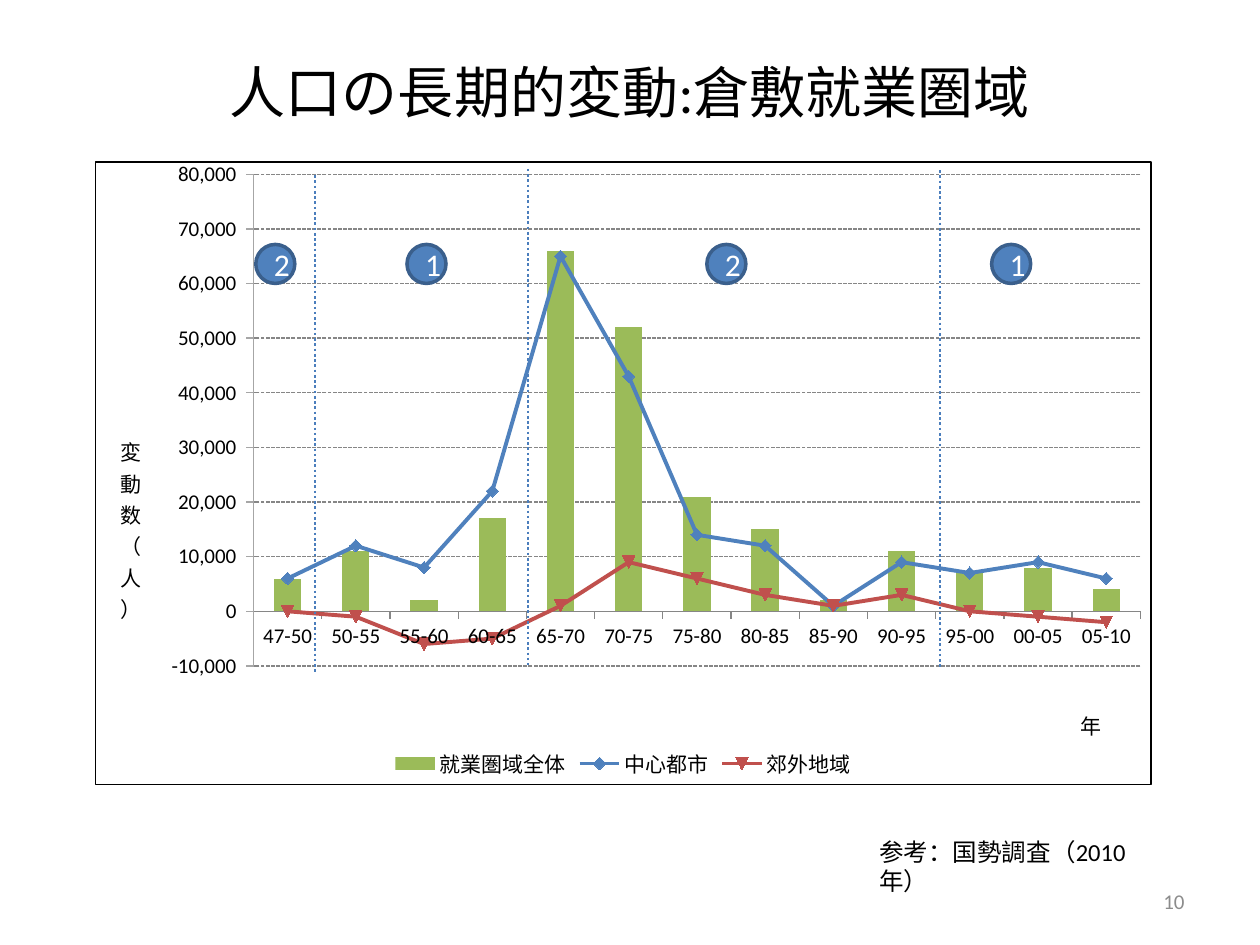
from dataclasses import dataclass

from lxml.etree import SubElement
from pptx import Presentation
from pptx.chart.data import CategoryChartData
from pptx.dml.color import RGBColor
from pptx.enum.chart import XL_CHART_TYPE as ChartType
from pptx.enum.chart import XL_LEGEND_POSITION as LegendPosition
from pptx.enum.chart import XL_TICK_MARK as TickMark
from pptx.enum.dml import MSO_LINE as Dash
from pptx.enum.shapes import MSO_CONNECTOR as Connector
from pptx.enum.shapes import MSO_SHAPE as ShapeType
from pptx.enum.text import MSO_ANCHOR as Anchor
from pptx.enum.text import PP_ALIGN as Align
from pptx.oxml import parse_xml
from pptx.oxml.ns import nsdecls, qn
from pptx.util import Inches, Pt


@dataclass(frozen=True)
class Theme:
    font: str = "Calibri"
    text: str = "000000"
    muted: str = "8C8C8C"
    white: str = "FFFFFF"
    grid: str = "868686"
    axis: str = "A6A6A6"
    total: str = "9BBB59"
    center: str = "4F81BD"
    suburb: str = "C0504D"
    badge_line: str = "3A5F8C"
    divider: str = "4B7EBC"
    title_size: int = 32
    badge_size: int = 18
    note_size: int = 14
    small_size: int = 12


THEME = Theme()
PERIODS = ["47-50", "50-55", "55-60", "60-65", "65-70", "70-75", "75-80",
           "80-85", "85-90", "90-95", "95-00", "00-05", "05-10"]
SERIES = {
    "就業圏域全体": [6000, 11000, 2000, 17000, 66000, 52000, 21000,
               15000, 2000, 11000, 7000, 8000, 4000],
    "中心都市": [6000, 12000, 8000, 22000, 65000, 43000, 14000,
             12000, 1000, 9000, 7000, 9000, 6000],
    "郊外地域": [0, -1000, -6000, -5000, 1000, 9000, 6000,
             3000, 1000, 3000, 0, -1000, -2000],
}
BADGES = [("2", 2.03), ("1", 3.23), ("2", 5.61), ("1", 7.87)]
DIVIDERS = [(2.5, 1.39), (4.19, 1.34), (7.46, 1.35)]


def rgb(value):
    return RGBColor.from_string(value)


def style_font(font, size, color):
    font.name = THEME.font
    font.size = Pt(size)
    font.bold = False
    font.color.rgb = rgb(color)


def style_line(line, color, width, dash=None):
    line.color.rgb = rgb(color)
    line.width = Pt(width)
    if dash is not None:
        line.dash_style = dash


def write_text(shape, text, size, color, align):
    frame = shape.text_frame
    frame.word_wrap = True
    frame.vertical_anchor = Anchor.MIDDLE
    frame.text = text
    paragraph = frame.paragraphs[0]
    paragraph.alignment = align
    style_font(paragraph.runs[0].font, size, color)


def add_text(slide, box, text, size, color, align):
    shape = slide.shapes.add_textbox(*map(Inches, box))
    write_text(shape, text, size, color, align)


def add_badge(group, text, left):
    shape = group.shapes.add_shape(
        ShapeType.OVAL, Inches(left), Inches(1.94), Inches(0.31), Inches(0.31))
    shape.shadow.inherit = False
    shape.fill.solid()
    shape.fill.fore_color.rgb = rgb(THEME.center)
    style_line(shape.line, THEME.badge_line, 2)
    write_text(shape, text, THEME.badge_size, THEME.white, Align.CENTER)


def add_divider(slide, x, top):
    line = slide.shapes.add_connector(
        Connector.STRAIGHT, Inches(x), Inches(top), Inches(x), Inches(top + 3.94))
    style_line(line.line, THEME.divider, 1.5, Dash.ROUND_DOT)
    SubElement(line._element.spPr, qn("a:effectLst"))


def set_layout(parent, **values):
    layout = parent.find(qn("c:layout"))
    if layout is None:
        layout = parse_xml(f"<c:layout {nsdecls('c')}/>")
        title_text = parent.find(qn("c:tx"))
        if title_text is None:
            parent.insert(0, layout)
        else:
            title_text.addnext(layout)
    manual = SubElement(layout, qn("c:manualLayout"))
    for name, value in values.items():
        SubElement(manual, qn(f"c:{name}")).set("val", str(value))


def set_axis_title(axis, text, x, y):
    frame = axis.axis_title.text_frame
    frame.text = text
    style_font(frame.paragraphs[0].runs[0].font, THEME.small_size, THEME.text)
    set_layout(axis.axis_title._element, xMode="edge", yMode="edge", x=x, y=y)
    return frame


def style_axis(axis, color):
    axis.major_tick_mark = TickMark.OUTSIDE
    axis.minor_tick_mark = TickMark.NONE
    style_font(axis.tick_labels.font, THEME.small_size, THEME.text)
    style_line(axis.format.line, color, 0.75)


def move_to_lines(chart):
    bars = chart.plots[0]._element
    lines = parse_xml(
        f"<c:lineChart {nsdecls('c')}><c:grouping val='standard'/>"
        "<c:varyColors val='0'/></c:lineChart>")
    for series in bars.findall(qn("c:ser"))[1:]:
        for flag in series.findall(qn("c:invertIfNegative")):
            series.remove(flag)
        lines.append(series)
    SubElement(lines, qn("c:marker")).set("val", "1")
    for axis_id in bars.findall(qn("c:axId")):
        SubElement(lines, qn("c:axId")).set("val", axis_id.get("val"))
    bars.addnext(lines)


def style_series(chart):
    bars, lines = chart.plots
    bars.gap_width = 150
    bars.vary_by_categories = False
    total = bars.series[0].format.fill
    total.solid()
    total.fore_color.rgb = rgb(THEME.total)
    for series, color in zip(lines.series, (THEME.center, THEME.suburb)):
        series.smooth = False
        style_line(series.format.line, color, 2.25)
        series.marker.size = 7
        series.marker.format.fill.solid()
        series.marker.format.fill.fore_color.rgb = rgb(color)
        style_line(series.marker.format.line, color, 0.75)


def add_population_chart(slide):
    data = CategoryChartData()
    data.categories = PERIODS
    for name, values in SERIES.items():
        data.add_series(name, values)
    chart = slide.shapes.add_chart(
        ChartType.COLUMN_CLUSTERED, Inches(0.75), Inches(1.28),
        Inches(8.39), Inches(4.95), data).chart
    chart.has_title = False
    style_font(chart.font, 10, THEME.text)
    move_to_lines(chart)
    style_series(chart)

    chart.has_legend = True
    chart.legend.position = LegendPosition.BOTTOM
    chart.legend.include_in_layout = False
    style_font(chart.legend.font, THEME.small_size, THEME.text)

    style_axis(chart.category_axis, THEME.grid)
    set_axis_title(chart.category_axis, "年", 0.93, 0.87)
    value_axis = chart.value_axis
    style_axis(value_axis, THEME.axis)
    value_axis.minimum_scale, value_axis.maximum_scale = -10000, 80000
    value_axis.major_unit = 10000
    value_axis.tick_labels.number_format = "#,##0_ "
    value_axis.tick_labels.number_format_is_linked = False
    style_line(value_axis.major_gridlines.format.line, THEME.grid, 0.75, Dash.SQUARE_DOT)
    frame = set_axis_title(value_axis, "変動数（人）", 0.02, 0.43)
    body = frame._txBody.find(qn("a:bodyPr"))
    body.set("rot", "0")
    body.set("vert", "wordArtVertRtl")

    space = chart._chartSpace
    chart_element = space.find(qn("c:chart"))
    set_layout(chart_element.find(qn("c:plotArea")), layoutTarget="inner", xMode="edge",
               yMode="edge", x=0.15, y=0.02, w=0.84, h=0.79)
    chart_element.addnext(parse_xml(
        f"<c:spPr {nsdecls('c', 'a')}><a:noFill/><a:ln w='{int(Pt(0.75))}'><a:solidFill>"
        f"<a:srgbClr val='{THEME.text}'/></a:solidFill></a:ln></c:spPr>"))


def main():
    presentation = Presentation()
    presentation.slide_width = Inches(10)
    presentation.slide_height = Inches(7.5)
    slide = presentation.slides.add_slide(presentation.slide_layouts[6])
    add_population_chart(slide)
    add_text(slide, (0.5, 0.3, 9, 0.85), "人口の長期的変動:倉敷就業圏域",
             THEME.title_size, THEME.text, Align.CENTER)
    add_text(slide, (7.17, 6.95, 2.33, 0.4), "10",
             THEME.small_size, THEME.muted, Align.RIGHT)
    add_text(slide, (6.88, 6.56, 2.27, 0.63), "参考：国勢調査（2010年）",
             THEME.note_size, THEME.text, Align.LEFT)
    group = slide.shapes.add_group_shape()
    for text, left in BADGES:
        add_badge(group, text, left)
    for x, top in DIVIDERS:
        add_divider(slide, x, top)
    presentation.save("out.pptx")


if __name__ == "__main__":
    main()
